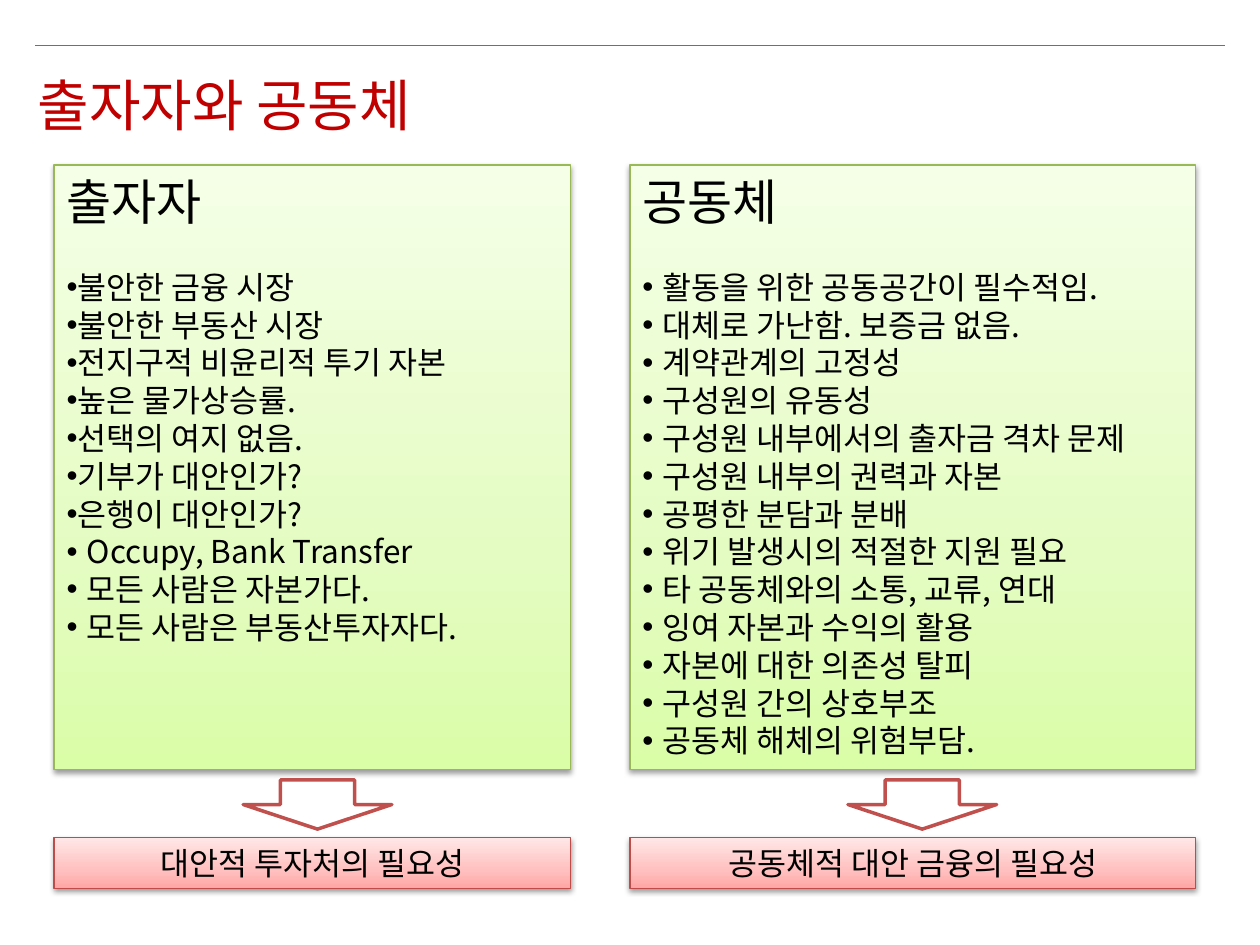
from copy import deepcopy
from dataclasses import dataclass

from lxml import etree
from pptx import Presentation
from pptx import util as u
from pptx.dml.color import RGBColor
from pptx.enum import shapes, text
from pptx.oxml import ns


@dataclass(frozen=True)
class Theme:
    """Colours, type sizes and spacing used on the slide."""
    font: str = "Noto Sans CJK KR"
    ink: str = "000000"
    title_ink: str = "C00000"
    rule: str = "68727E"
    paper: str = "FFFFFF"
    arrow: str = "C0504D"
    green: tuple = ("DAFDA7", "E4FCC2", "F5FFE7")
    green_edge: str = "98B955"
    red: tuple = ("FFA6A5", "FFC0BF", "FFE7E7")
    red_edge: str = "BF4C48"
    title_size: int = 32
    heading_size: int = 28
    body_size: int = 18
    leading: float = 1.2


THEME = Theme()
TIGHT, WIDE = 0.09, 0.16

COLUMNS = (
    dict(left=0.43, width=4.1, arrow_left=1.93, heading="출자자",
         need="대안적 투자처의 필요성",
         points=(
             (TIGHT, ("불안한 금융 시장", "불안한 부동산 시장", "전지구적 비윤리적 투기 자본",
                      "높은 물가상승률.", "선택의 여지 없음.", "기부가 대안인가?",
                      "은행이 대안인가?")),
             (WIDE, ("Occupy, Bank Transfer", "모든 사람은 자본가다.",
                     "모든 사람은 부동산투자자다.")))),
    dict(left=5, width=4.49, arrow_left=6.73, heading="공동체",
         need="공동체적 대안 금융의 필요성",
         points=(
             (WIDE, ("활동을 위한 공동공간이 필수적임.", "대체로 가난함. 보증금 없음.",
                     "계약관계의 고정성", "구성원의 유동성", "구성원 내부에서의 출자금 격차 문제",
                     "구성원 내부의 권력과 자본", "공평한 분담과 분배",
                     "위기 발생시의 적절한 지원 필요", "타 공동체와의 소통, 교류, 연대",
                     "잉여 자본과 수익의 활용", "자본에 대한 의존성 탈피",
                     "구성원 간의 상호부조", "공동체 해체의 위험부담.")),)),
)


def rgb(value):
    """Turn a hex string into a colour."""
    return RGBColor.from_string(value)


def write(paragraph, words, size, color=THEME.ink, align=text.PP_ALIGN.LEFT):
    """Add one run to a paragraph and set its type."""
    paragraph.alignment = align
    paragraph.line_spacing = u.Pt(size * THEME.leading)
    paragraph.space_before = u.Pt(0)
    run = paragraph.add_run()
    run.text = words
    run.font.size = u.Pt(size)
    run.font.name = THEME.font
    run.font.color.rgb = rgb(color)
    east_asian = etree.SubElement(run.font._element, ns.qn("a:ea"))
    east_asian.set("typeface", THEME.font)


def add_bullet(paragraph, indent):
    """Give a paragraph a hanging bullet."""
    properties = paragraph._p.get_or_add_pPr()
    properties.set("marL", str(u.Inches(indent)))
    properties.set("indent", str(-u.Inches(indent)))
    font = etree.SubElement(properties, ns.qn("a:buFont"))
    font.set("typeface", "Arial")
    etree.SubElement(properties, ns.qn("a:buChar")).set("char", "•")


def add_shadow(shape):
    """Give a shape a soft shadow below it."""
    shape.shadow.inherit = False
    effects = shape._element.spPr.find(ns.qn("a:effectLst"))
    shadow = etree.SubElement(effects, ns.qn("a:outerShdw"), blurRad=str(u.Pt(3.1)),
                              dist=str(u.Pt(1.6)), dir="5400000", rotWithShape="0")
    color = etree.SubElement(shadow, ns.qn("a:srgbClr"), val=THEME.ink)
    etree.SubElement(color, ns.qn("a:alpha"), val="38000")


def add_panel(slide, left, top, width, height, tints, edge, anchor):
    """Add a gradient box and return its text frame."""
    panel = slide.shapes.add_shape(shapes.MSO_SHAPE.RECTANGLE, u.Inches(left),
                                   u.Inches(top), u.Inches(width), u.Inches(height))
    panel.fill.gradient()
    panel.fill.gradient_angle = 90
    stop_list = panel._element.spPr.find(".//" + ns.qn("a:gsLst"))
    stop_list.insert(1, deepcopy(stop_list[0]))
    for stop, position, tint in zip(panel.fill.gradient_stops, (0, 0.35, 1), tints):
        stop.position = position
        stop.color.rgb = rgb(tint)
    panel.line.color.rgb = rgb(edge)
    panel.line.width = u.Pt(0.75)
    add_shadow(panel)
    frame = panel.text_frame
    frame.word_wrap = True
    frame.vertical_anchor = anchor
    return frame


def add_arrow(slide, left):
    """Add an outlined arrow from a list down to its conclusion."""
    arrow = slide.shapes.add_shape(shapes.MSO_SHAPE.DOWN_ARROW, u.Inches(left),
                                   u.Inches(6.19), u.Inches(1.18), u.Inches(0.39))
    arrow.shadow.inherit = False
    arrow.fill.solid()
    arrow.fill.fore_color.rgb = rgb(THEME.paper)
    arrow.line.color.rgb = rgb(THEME.arrow)
    arrow.line.width = u.Pt(2)


def add_column(slide, left, width, arrow_left, heading, need, points):
    """Add a headed list, an arrow and the need that follows."""
    frame = add_panel(slide, left, 1.31, width, 4.8, THEME.green, THEME.green_edge,
                      text.MSO_ANCHOR.TOP)
    title = frame.paragraphs[0]
    write(title, heading, THEME.heading_size)
    title.space_after = u.Pt(THEME.body_size * THEME.leading)
    for indent, lines in points:
        for line in lines:
            paragraph = frame.add_paragraph()
            write(paragraph, line, THEME.body_size)
            add_bullet(paragraph, indent)
    add_arrow(slide, arrow_left)
    conclusion = add_panel(slide, left, 6.65, width, 0.4, THEME.red, THEME.red_edge,
                           text.MSO_ANCHOR.MIDDLE)
    write(conclusion.paragraphs[0], need, THEME.body_size, align=text.PP_ALIGN.CENTER)


def add_title(slide, words):
    """Place the title under a thin rule."""
    rule = slide.shapes.add_connector(shapes.MSO_CONNECTOR.STRAIGHT, u.Inches(0.28),
                                      u.Inches(0.36), u.Inches(9.72), u.Inches(0.36))
    rule.line.color.rgb = rgb(THEME.rule)
    rule.line.width = u.Pt(0.25)
    etree.SubElement(rule._element.spPr, ns.qn("a:effectLst"))
    title = slide.shapes.title
    title.left, title.top = u.Inches(0.2), u.Inches(0.51)
    title.width, title.height = u.Inches(9.53), u.Inches(0.64)
    title.text_frame.vertical_anchor = text.MSO_ANCHOR.TOP
    title.text_frame.auto_size = text.MSO_AUTO_SIZE.NONE
    write(title.text_frame.paragraphs[0], words, THEME.title_size, THEME.title_ink)


def main():
    """Build the slide and save it."""
    deck = Presentation()
    deck.slide_width, deck.slide_height = u.Inches(10), u.Inches(7.5)
    slide = deck.slides.add_slide(deck.slide_layouts[5])
    add_title(slide, "출자자와 공동체")
    for column in COLUMNS:
        add_column(slide, **column)
    deck.save("out.pptx")


if __name__ == "__main__":
    main()
